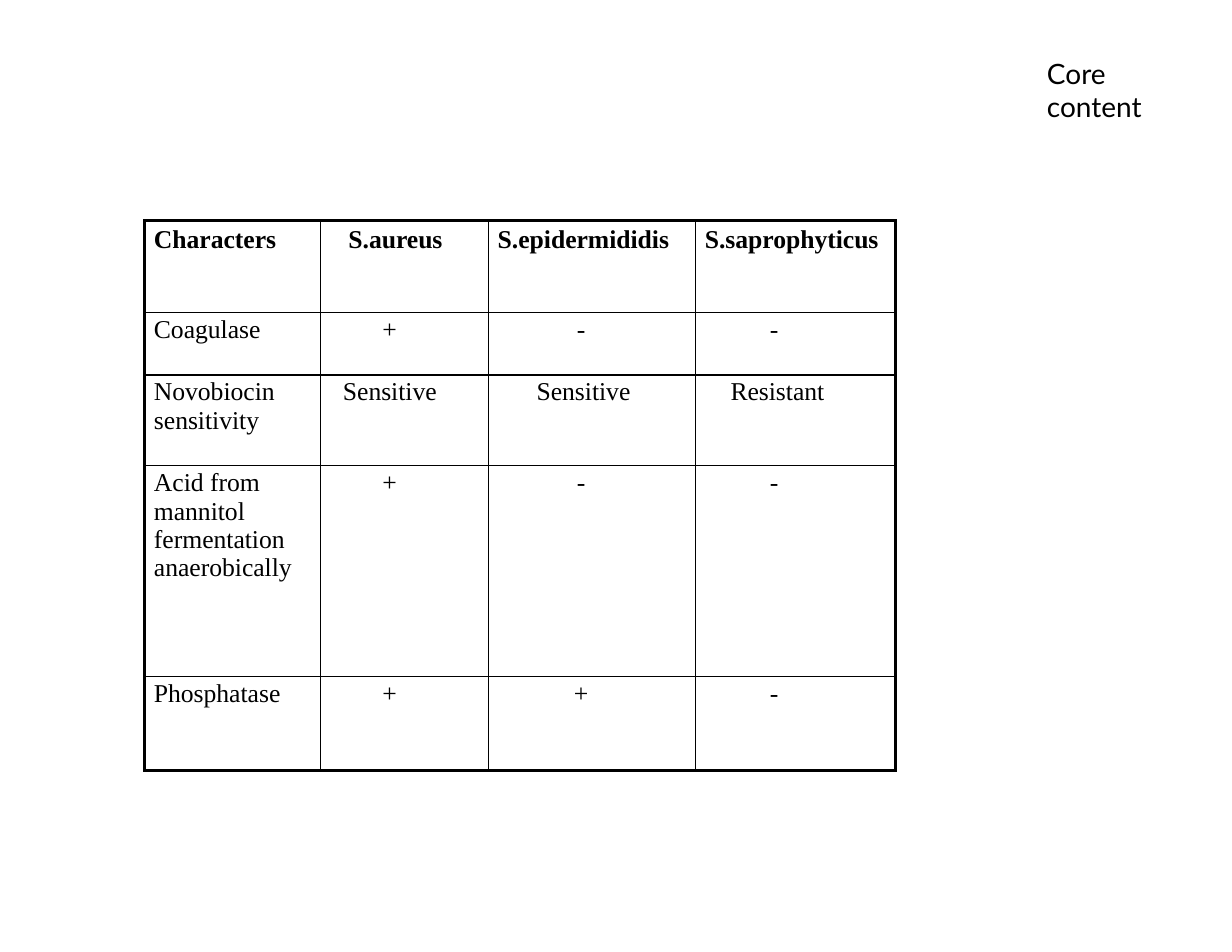
from dataclasses import dataclass

from lxml.etree import SubElement
from pptx import Presentation
from pptx.dml.color import RGBColor
from pptx.enum.text import MSO_AUTO_SIZE as AutoSize, PP_ALIGN as Align
from pptx.oxml.ns import qn
from pptx.util import Pt


@dataclass(frozen=True)
class Theme:
    """Colours, fonts and sizes of the slide."""
    ink: RGBColor = RGBColor(0, 0, 0)
    table_font: str = "Times New Roman"
    table_size: float = 16.5
    label_font: str = "Lato"
    label_size: float = 18
    inner_line: float = 1
    outer_line: float = 2.25


THEME = Theme()
COLUMN_WIDTHS = (113, 108, 133.2, 128.8)
ROW_HEIGHTS = (59, 40, 58.5, 135.5, 60.5)
SIGN_RIGHT_MARGINS = (0, 19, 14, 28)
HEADER_INDENTS = (6, 18, 6, 6)
WORD_INDENTS = (6, 14.5, 31, 22.5)
ROWS = (
    ("Characters", "S.aureus", "S.epidermididis", "S.saprophyticus"),
    ("Coagulase", "+", "-", "-"),
    ("Novobiocin sensitivity", "Sensitive", "Sensitive", "Resistant"),
    ("Acid from mannitol fermentation anaerobically", "+", "-", "-"),
    ("Phosphatase", "+", "+", "-"),
)


def style_paragraph(paragraph, name, size, bold=False):
    """Set the font of a whole paragraph."""
    font = paragraph.font
    font.name, font.size, font.bold = name, Pt(size), bold
    font.color.rgb = THEME.ink


def set_borders(cell, outer_sides):
    """Draw the four cell borders, heavier on the outer sides."""
    properties = cell._tc.get_or_add_tcPr()
    for side in "LRTB":
        width = THEME.outer_line if side in outer_sides else THEME.inner_line
        line = SubElement(properties, qn(f"a:ln{side}"), w=str(Pt(width)))
        fill = SubElement(line, qn("a:solidFill"))
        SubElement(fill, qn("a:srgbClr"), val=str(THEME.ink))


def fill_cell(cell, text, row, column):
    """Write a cell, centring signs and indenting words."""
    is_header = row == 0
    is_sign = text in "+-"
    indents = HEADER_INDENTS if is_header else WORD_INDENTS
    cell.margin_left = Pt(0 if is_sign else indents[column])
    cell.margin_right = Pt(SIGN_RIGHT_MARGINS[column] if is_sign else 0)
    cell.margin_top = Pt(3 if is_header else 2)
    cell.margin_bottom = 0
    cell.text = text
    paragraph = cell.text_frame.paragraphs[0]
    paragraph.alignment = Align.CENTER if is_sign else Align.LEFT
    style_paragraph(paragraph, THEME.table_font, THEME.table_size, is_header)


def add_comparison_table(slide, left, top):
    """Add the table comparing the three species."""
    frame = slide.shapes.add_table(
        len(ROWS), len(COLUMN_WIDTHS), Pt(left), Pt(top),
        Pt(sum(COLUMN_WIDTHS)), Pt(sum(ROW_HEIGHTS)))
    table = frame.table
    table.first_row = table.horz_banding = False
    for column, width in zip(table.columns, COLUMN_WIDTHS):
        column.width = Pt(width)
    for row, height in zip(table.rows, ROW_HEIGHTS):
        row.height = Pt(height)
    last_row, last_column = len(ROWS) - 1, len(COLUMN_WIDTHS) - 1
    for row, texts in enumerate(ROWS):
        for column, text in enumerate(texts):
            cell = table.cell(row, column)
            fill_cell(cell, text, row, column)
            edges = {"L": column == 0, "R": column == last_column,
                     "T": row == 0, "B": row == last_row}
            set_borders(cell, [side for side, outer in edges.items() if outer])
            cell.fill.background()


def add_label(slide, text, left, top, width, height):
    """Add a wrapping text label."""
    text_frame = slide.shapes.add_textbox(
        Pt(left), Pt(top), Pt(width), Pt(height)).text_frame
    text_frame.word_wrap = True
    text_frame.auto_size = AutoSize.SHAPE_TO_FIT_TEXT
    text_frame.text = text
    style_paragraph(text_frame.paragraphs[0], THEME.label_font, THEME.label_size)


def main():
    """Build and save the slide."""
    presentation = Presentation()
    presentation.slide_width, presentation.slide_height = Pt(792), Pt(612)
    slide = presentation.slides.add_slide(presentation.slide_layouts[6])
    add_comparison_table(slide, 93, 142)
    add_label(slide, "Core content", 666, 32.5, 108, 51)
    presentation.save("out.pptx")


if __name__ == "__main__":
    main()
